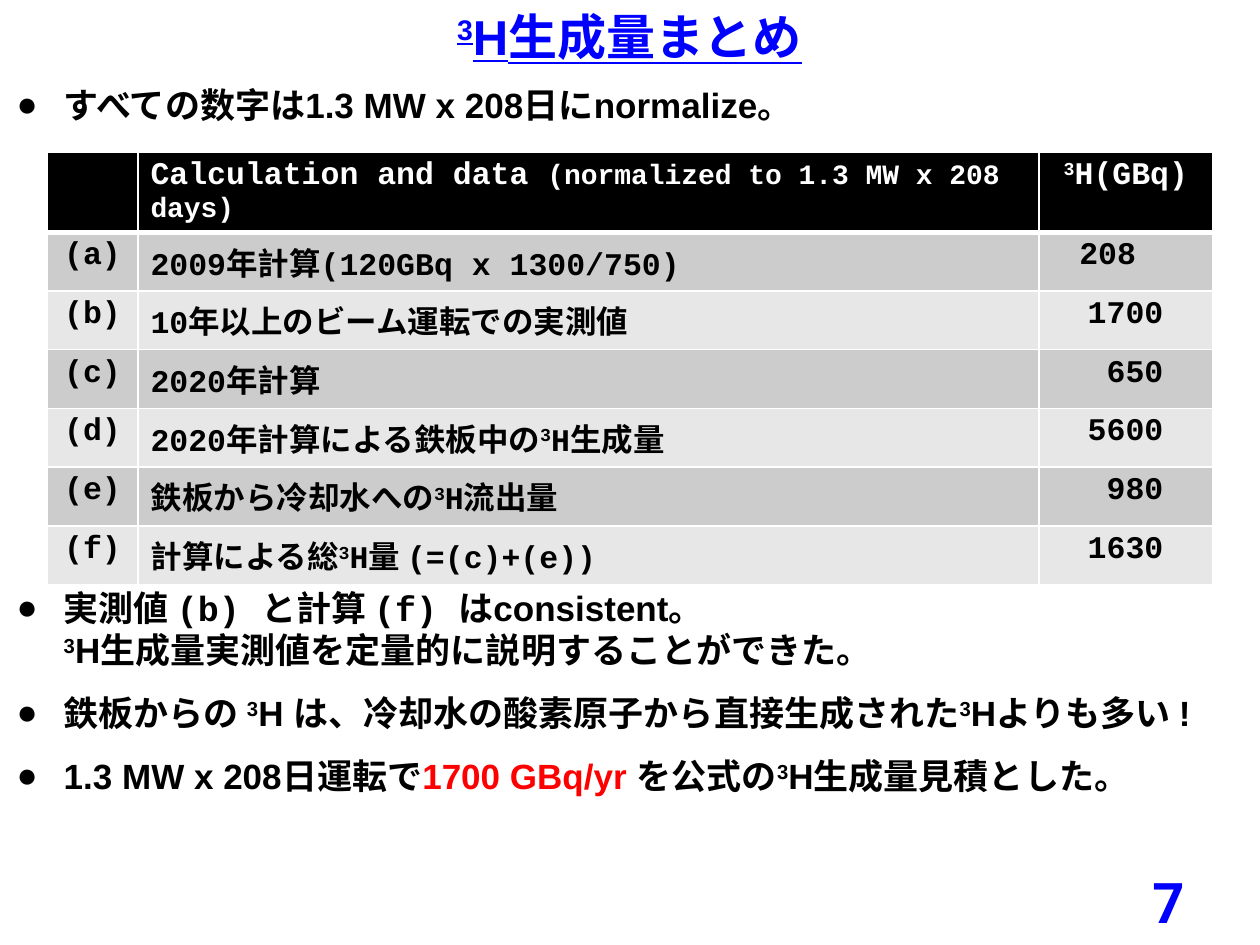
from dataclasses import dataclass

from lxml import etree
from pptx import Presentation
from pptx.dml.color import RGBColor
from pptx.enum.text import MSO_ANCHOR, MSO_AUTO_SIZE, PP_ALIGN
from pptx.oxml.ns import qn
from pptx.util import Cm, Pt

LEFT, CENTER, RIGHT = PP_ALIGN.LEFT, PP_ALIGN.CENTER, PP_ALIGN.RIGHT
TOP, MIDDLE = MSO_ANCHOR.TOP, MSO_ANCHOR.MIDDLE
NO_AUTOFIT = MSO_AUTO_SIZE.NONE
TWO_CONTENT = 3


@dataclass(frozen=True)
class Theme:
    """Colours, fonts and type sizes of the deck."""
    blue: str = "0000FF"
    red: str = "FF0000"
    black: str = "000000"
    white: str = "FFFFFF"
    bands: tuple = ("CCCCCC", "E7E7E7")
    sans: str = "Arial"
    mono: str = "Courier New"
    number: str = "Roboto"
    title_size: int = 28
    body_size: int = 20
    table_size: int = 18
    note_size: int = 16
    page_size: int = 32


THEME = Theme()
TITLE = {"size": Pt(THEME.title_size), "name": THEME.sans, "bold": True,
         "underline": True, "color": THEME.blue}
BODY = {"size": Pt(THEME.body_size), "name": THEME.sans, "bold": True,
        "color": THEME.black}
CELL = {**BODY, "size": Pt(THEME.table_size), "name": THEME.mono}
HEADER = {**CELL, "color": THEME.white}
PAGE = {"size": Pt(THEME.page_size), "name": THEME.number, "bold": True,
        "color": THEME.blue}

MONO = {"name": THEME.mono}
TRITIUM = [("3", {"baseline": "30000"}), ("H", {})]
BREAK = ("\n", {})

INTRO = [[("すべての数字は1.3 MW x 208日にnormalize。", {})]]
FINDINGS = [
    [("実測値 ", {}), ("(b) ", MONO), ("と計算 ", {}), ("(f) は", MONO),
     ("consistent。", {}), BREAK, *TRITIUM,
     ("生成量実測値を定量的に説明することができた。", {})],
    [("鉄板からの ", {}), *TRITIUM,
     (" は、冷却水の酸素原子から直接生成された", {}), *TRITIUM,
     ("よりも多い !", {})],
    [("1.3 MW x 208日運転で", {}), ("1700 GBq/yr ", {"color": THEME.red}),
     ("を公式の", {}), *TRITIUM, ("生成量見積とした。", {})],
]
HEADINGS = [
    [],
    [("Calculation and data ", {}),
     ("(normalized to 1.3 MW x 208 days)", {"size": Pt(THEME.note_size)})],
    [*TRITIUM, ("(GBq)", {})],
]
ROWS = [
    ("(a)", [("2009年計算(120GBq x 1300/750)", {})], "208", 1.55),
    ("(b)", [("10年以上のビーム運転での実測値", {})], "1700", 1),
    ("(c)", [("2020年計算", {})], "650", 1),
    ("(d)", [("2020年計算による鉄板中の", {}), *TRITIUM, ("生成量", {})], "5600", 1),
    ("(e)", [("鉄板から冷却水への", {}), *TRITIUM, ("流出量", {})], "980", 1),
    ("(f)", [("計算による総", {}), *TRITIUM, ("量 (=(c)+(e))", {})], "1630", 1),
]


def write_spans(para, spans, base):
    """Add formatted spans to a paragraph, each varying the base format."""
    for text, changes in spans:
        if text == "\n":
            para.add_line_break()
            line_break = para._p.findall(qn("a:br"))[-1]
            size = str(int(base["size"].pt * 100))
            etree.SubElement(line_break, qn("a:rPr"), sz=size)
            continue
        span = para.add_run()
        span.text = text
        for key, value in {**base, **changes}.items():
            if key == "color":
                span.font.color.rgb = RGBColor.from_string(value)
            elif key == "baseline":
                span._r.get_or_add_rPr().set(key, value)
            else:
                setattr(span.font, key, value)


def place(shape, box, anchor):
    """Move a text shape to its box and set up its frame."""
    for key, value in zip(("left", "top", "width", "height"), box):
        setattr(shape, key, Cm(value))
    frame = shape.text_frame
    frame.word_wrap = True
    frame.auto_size = NO_AUTOFIT
    frame.vertical_anchor = anchor
    return frame


def add_line(shape, box, spans, base, align):
    """Fill a shape with one vertically centred line of text."""
    para = place(shape, box, MIDDLE).paragraphs[0]
    para.alignment = align
    write_spans(para, spans, base)


def add_bullets(shape, box, items):
    """Fill a body placeholder with a bulleted list."""
    frame = place(shape, box, TOP)
    for index, spans in enumerate(items):
        para = frame.add_paragraph() if index else frame.paragraphs[0]
        para.alignment = LEFT
        para.space_before, para.space_after = Pt(0), Pt(12)
        properties = para._p.get_or_add_pPr()
        properties.set("marL", str(Cm(0.95)))
        properties.set("indent", str(-Cm(0.95)))
        etree.SubElement(properties, qn("a:buChar"), char="●")
        write_spans(para, spans, BODY)


def set_borders(cell, top, bottom):
    """Draw white cell borders with the given top and bottom widths."""
    properties = cell._tc.get_or_add_tcPr()
    widths = {"a:lnL": 1, "a:lnR": 1, "a:lnT": top, "a:lnB": bottom}
    for tag, width in widths.items():
        line = etree.SubElement(properties, qn(tag), w=str(Pt(width)))
        fill = etree.SubElement(line, qn("a:solidFill"))
        etree.SubElement(fill, qn("a:srgbClr"), val=THEME.white)


def fill_cell(cell, spans, base, align, color):
    """Write and paint one table cell."""
    para = cell.text_frame.paragraphs[0]
    para.alignment = align
    write_spans(para, spans, base)
    cell.fill.solid()
    cell.fill.fore_color.rgb = RGBColor.from_string(color)


def add_results(page, box):
    """Add the table of calculated and measured amounts."""
    left, top, width, height = map(Cm, box)
    count = len(ROWS) + 1
    table = page.shapes.add_table(count, 3, left, top, width, height).table
    label_width, value_width = Cm(1.83), Cm(3.51)
    widths = (label_width, width - label_width - value_width, value_width)
    for column, column_width in zip(table.columns, widths):
        column.width = column_width
    for index in range(count):
        for cell in table.rows[index].cells:
            set_borders(cell, 3 if index == 1 else 1, 1 if index else 3)
    for cell, spans, align in zip(table.rows[0].cells, HEADINGS,
                                  (CENTER, LEFT, CENTER)):
        fill_cell(cell, spans, HEADER, align, THEME.black)
    for index, (label, spans, value, margin) in enumerate(ROWS):
        cells = table.rows[index + 1].cells
        cells[2].margin_right = Cm(margin)
        contents = ([(label, {})], spans, [(value, {})])
        for cell, content, align in zip(cells, contents, (CENTER, LEFT, RIGHT)):
            fill_cell(cell, content, CELL, align, THEME.bands[index % 2])


def build_summary(deck):
    """Add the summary page to the deck."""
    page = deck.slides.add_slide(deck.slide_layouts[TWO_CONTENT])
    title, intro, findings = page.placeholders
    add_bullets(intro, (0.08, 1.55, 25.32, 1.2), INTRO)
    add_bullets(findings, (0.08, 11.7, 25.32, 5), FINDINGS)
    add_line(title, (0.64, 0, 24.1, 1.45),
             [*TRITIUM, ("生成量まとめ", {})], TITLE, CENTER)
    add_results(page, (0.95, 3.07, 23.5, 7.21))
    number = page.shapes.add_textbox(0, 0, 0, 0)
    add_line(number, (18.21, 17.65, 5.92, 1.02), [("7", {})], PAGE, RIGHT)


def main():
    """Build and save the deck."""
    deck = Presentation()
    deck.slide_width, deck.slide_height = Cm(25.4), Cm(19.05)
    build_summary(deck)
    deck.save("out.pptx")


if __name__ == "__main__":
    main()
